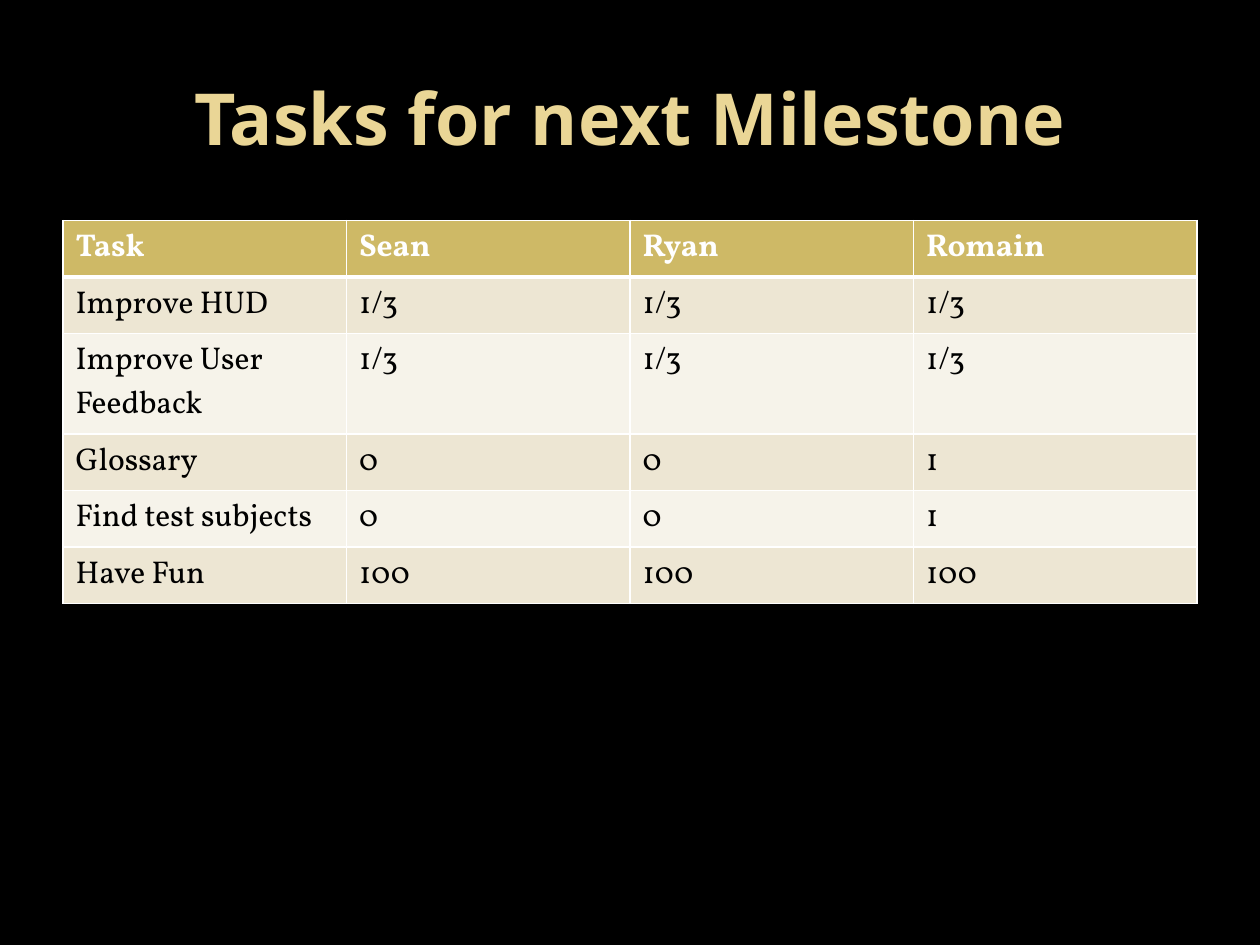
"""Build the milestone task-split slide."""
from lxml import etree
from pptx import Presentation, util as u
from pptx.dml.color import RGBColor
from pptx.enum import text
from pptx.oxml.ns import qn

TITLE = "Tasks for next Milestone"
ROWS = [
    ("Task", "Sean", "Ryan", "Romain"),
    ("Improve HUD", "1/3", "1/3", "1/3"),
    ("Improve User Feedback", "1/3", "1/3", "1/3"),
    ("Glossary", "0", "0", "1"),
    ("Find test subjects", "0", "0", "1"),
    ("Have Fun", "100", "100", "100"),
]
THEME = {
    "background": "000000", "title": "EAD696", "header": "CEB966",
    "bands": ("F6F3EA", "EDE6D3"), "border": "FFFFFF",
    "header_text": "FFFFFF", "body_text": "000000",
    "title_font": "Noto Sans", "body_font": "Vollkorn",
    "title_size": 41, "body_size": 18,
}
LEFT, WIDTH, ROW_HEIGHT = 0.5, 9, 0.41


def paint(fill, color):
    fill.solid()
    fill.fore_color.rgb = RGBColor.from_string(color)


def write(tf, content, *, font, size, color, bold=False, align=text.PP_ALIGN.LEFT):
    p = tf.paragraphs[0]
    p.alignment = align
    r = p.add_run()
    r.text = content
    r.font.name, r.font.size, r.font.bold = font, u.Pt(size), bold
    r.font.color.rgb = RGBColor.from_string(color)


def add_borders(cell, **widths):
    tc_pr = cell._tc.get_or_add_tcPr()
    for side in "LRTB":
        ln = etree.SubElement(tc_pr, qn(f"a:ln{side}"), w=str(u.Pt(widths.get(side, 1))))
        solid = etree.SubElement(ln, qn("a:solidFill"))
        etree.SubElement(solid, qn("a:srgbClr"), val=THEME["border"])


def add_title(s):
    sp = s.shapes.title
    sp.left, sp.top = u.Inches(LEFT), u.Inches(0.3)
    sp.width, sp.height = u.Inches(WIDTH), u.Inches(1.25)
    tf = sp.text_frame
    tf.auto_size = text.MSO_AUTO_SIZE.NONE
    tf.vertical_anchor = text.MSO_ANCHOR.MIDDLE
    write(tf, TITLE, font=THEME["title_font"], size=THEME["title_size"],
          color=THEME["title"], bold=True, align=text.PP_ALIGN.CENTER)


def add_tasks(s):
    table = s.shapes.add_table(
        len(ROWS), len(ROWS[0]), u.Inches(LEFT), u.Inches(1.75),
        u.Inches(WIDTH), u.Inches(ROW_HEIGHT * len(ROWS))).table
    for i, row in enumerate(ROWS):
        header = i == 0
        for j, content in enumerate(row):
            cell = table.cell(i, j)
            add_borders(cell, T=3 if i == 1 else 1, B=3 if header else 1)
            paint(cell.fill, THEME["header"] if header else THEME["bands"][i % 2])
            write(cell.text_frame, content, font=THEME["body_font"],
                  size=THEME["body_size"], bold=header,
                  color=THEME["header_text" if header else "body_text"])


def main():
    prs = Presentation()
    prs.slide_width, prs.slide_height = u.Inches(10), u.Inches(7.5)
    s = prs.slides.add_slide(prs.slide_layouts[5])
    paint(s.background.fill, THEME["background"])
    add_title(s)
    add_tasks(s)
    prs.save("out.pptx")


if __name__ == "__main__":
    main()
